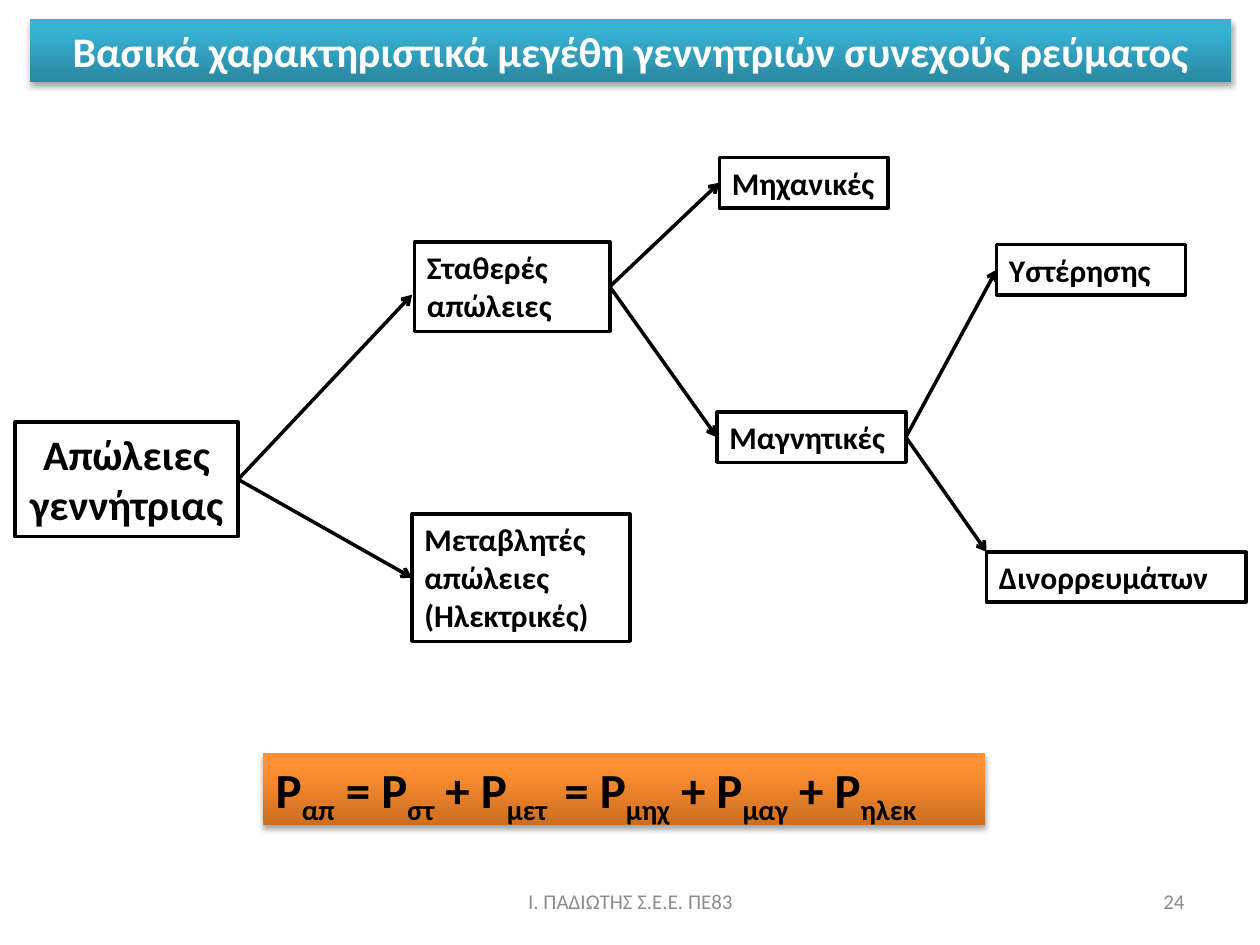
from lxml.etree import SubElement
from pptx import Presentation
from pptx.dml.color import RGBColor
from pptx.enum.shapes import MSO_CONNECTOR, MSO_SHAPE
from pptx.enum.text import MSO_ANCHOR, MSO_AUTO_SIZE, PP_ALIGN
from pptx.oxml import parse_xml
from pptx.oxml.ns import nsdecls, qn
from pptx.util import Inches, Pt

BLACK, WHITE, GREY = "000000", "FFFFFF", "8C8C8C"
TEAL = [(0, "2A88A2"), (80, "37B1D2"), (100, "34B4D6")]
ORANGE = [(0, "CC6E20"), (80, "FF9034"), (100, "FF9136")]

# Tree nodes: text, left, top, width, height
NODES = {
    "losses": ("Απώλειες γεννήτριας", 0.12, 3.35, 1.77, 0.91),
    "fixed": ("Σταθερές απώλειες", 3.29, 1.92, 1.55, 0.71),
    "variable": ("Μεταβλητές απώλειες (Ηλεκτρικές)", 3.27, 4.08, 1.73, 1.01),
    "mechanical": ("Μηχανικές", 5.71, 1.25, 1.34, 0.4),
    "magnetic": ("Μαγνητικές", 5.69, 3.27, 1.5, 0.4),
    "hysteresis": ("Υστέρησης", 7.91, 1.94, 1.5, 0.4),
    "eddy": ("Δινορρευμάτων", 7.83, 4.38, 2.06, 0.4),
}
# Branches: parent, child, end point where it is not the child's left middle
BRANCHES = [
    ("losses", "fixed", (3.27, 2.34)),
    ("losses", "variable", None),
    ("fixed", "mechanical", None),
    ("fixed", "magnetic", None),
    ("magnetic", "hysteresis", None),
    ("magnetic", "eddy", (7.83, 4.38)),
]
# Formula: each symbol followed by its subscript
FORMULA = [("Ρ", "απ"), (" = Ρ", "στ"), (" + Ρ", "μετ "),
           (" = Ρ", "μηχ"), (" + Ρ", "μαγ"), (" + Ρ", "ηλεκ")]


def rgb(color):
    return RGBColor.from_string(color)


def add_run(p, text, size=18, color=BLACK, bold=True, baseline=None):
    r = p.add_run()
    r.text = text
    r.font.name = "Calibri"
    r.font.size = Pt(size)
    r.font.bold = bold
    r.font.color.rgb = rgb(color)
    if baseline is not None:
        r.font._element.set("baseline", str(baseline * 1000))


def add_box(s, left, top, width, height, align=PP_ALIGN.LEFT):
    sp = s.shapes.add_shape(MSO_SHAPE.RECTANGLE, Inches(left), Inches(top),
                            Inches(width), Inches(height))
    sp.shadow.inherit = False
    tf = sp.text_frame
    tf.word_wrap = True
    tf.auto_size = MSO_AUTO_SIZE.SHAPE_TO_FIT_TEXT
    tf.vertical_anchor = MSO_ANCHOR.TOP
    p = tf.paragraphs[0]
    p.alignment = align
    return sp, p


def add_node(s, text, *place, size=18, align=PP_ALIGN.LEFT):
    sp, p = add_box(s, *place, align=align)
    sp.fill.background()
    sp.line.color.rgb = rgb(BLACK)
    sp.line.width = Pt(2)
    add_run(p, text, size=size)


def add_band(s, stops, *place, align=PP_ALIGN.LEFT):
    """Rectangle with a vertical gradient and a soft shadow below."""
    sp, p = add_box(s, *place, align=align)
    sp.line.fill.background()
    gs = "".join(f'<a:gs pos="{pos * 1000}"><a:srgbClr val="{color}"/></a:gs>'
                 for pos, color in stops)
    sp_pr = sp._element.spPr
    sp_pr.find(qn("a:prstGeom")).addnext(parse_xml(
        f'<a:gradFill {nsdecls("a")} rotWithShape="1"><a:gsLst>{gs}</a:gsLst>'
        '<a:lin ang="16200000" scaled="0"/></a:gradFill>'))
    sp_pr.find(qn("a:effectLst")).append(parse_xml(
        f'<a:outerShdw {nsdecls("a")} blurRad="{Pt(3.1)}" dist="{Pt(1.8)}" '
        'dir="5400000" rotWithShape="0"><a:srgbClr val="000000">'
        '<a:alpha val="35000"/></a:srgbClr></a:outerShdw>'))
    return p


def add_branch(s, parent, child, end=None):
    _, left, top, width, height = NODES[parent]
    _, child_left, child_top, _, child_height = NODES[child]
    end = end or (child_left, child_top + child_height / 2)
    line = s.shapes.add_connector(
        MSO_CONNECTOR.STRAIGHT, Inches(left + width), Inches(top + height / 2),
        Inches(end[0]), Inches(end[1]))
    line.line.color.rgb = rgb(BLACK)
    line.line.width = Pt(2)
    SubElement(line.line._get_or_add_ln(), qn("a:tailEnd"), type="arrow")
    SubElement(line._element.spPr, qn("a:effectLst"))


def add_footer(s, text, left, width, align):
    tf = s.shapes.add_textbox(Inches(left), Inches(6.95), Inches(width),
                              Inches(0.4)).text_frame
    tf.word_wrap = True
    tf.vertical_anchor = MSO_ANCHOR.MIDDLE
    p = tf.paragraphs[0]
    p.alignment = align
    add_run(p, text, size=12, color=GREY, bold=False)


def main():
    prs = Presentation()
    prs.slide_width, prs.slide_height = Inches(10), Inches(7.5)
    s = prs.slides.add_slide(prs.slide_layouts[6])

    # Title band
    p = add_band(s, TEAL, 0.24, 0.15, 9.53, 0.5, align=PP_ALIGN.CENTER)
    add_run(p, "Βασικά χαρακτηριστικά μεγέθη γεννητριών συνεχούς ρεύματος",
            size=24, color=WHITE)

    # Tree of losses
    for name, node in NODES.items():
        if name == "losses":
            add_node(s, *node, size=24, align=PP_ALIGN.CENTER)
        else:
            add_node(s, *node)
    for branch in BRANCHES:
        add_branch(s, *branch)

    # Formula band
    p = add_band(s, ORANGE, 2.09, 5.98, 5.73, 0.57)
    for symbol, subscript in FORMULA:
        add_run(p, symbol, size=28)
        add_run(p, subscript, size=28, baseline=-25)

    # Footer
    add_footer(s, "Ι. ΠΑΔΙΩΤΗΣ Σ.Ε.Ε. ΠΕ83", 3.42, 3.17, PP_ALIGN.CENTER)
    add_footer(s, "24", 7.17, 2.33, PP_ALIGN.RIGHT)

    prs.save("out.pptx")


if __name__ == "__main__":
    main()
